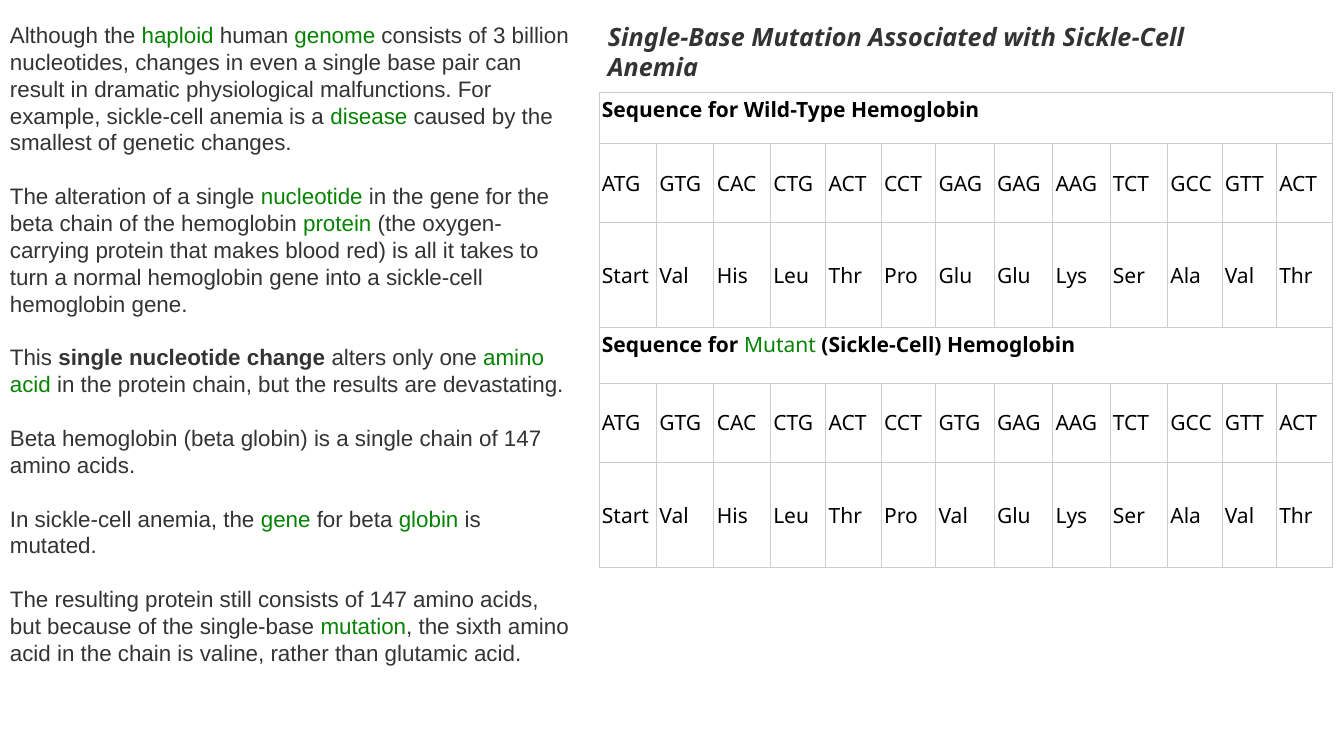
from dataclasses import dataclass

from lxml import etree
from pptx import Presentation
from pptx.dml.color import RGBColor
from pptx.enum.text import MSO_ANCHOR
from pptx.oxml.ns import qn
from pptx.util import Pt

MIDDLE, TOP = MSO_ANCHOR.MIDDLE, MSO_ANCHOR.TOP
EMU_PER_PX = 9144


@dataclass(frozen=True)
class Theme:
    body_font: str = "Arial"
    sequence_font: str = "Noto Sans"
    ink: str = "333333"
    sequence_ink: str = "000000"
    term: str = "068303"
    rule: str = "CCCCCC"
    paper: str = "FFFFFF"
    body_size: int = 16
    title_size: int = 18
    sequence_size: int = 15
    rule_width: float = 0.5


THEME = Theme()

# |word| marks a glossary term, *words* marks bold.
STORY = [
    "Although the |haploid| human |genome| consists of 3 billion nucleotides, "
    "changes in even a single base pair can result in dramatic physiological "
    "malfunctions. For example, sickle-cell anemia is a |disease| caused by "
    "the smallest of genetic changes.",
    "The alteration of a single |nucleotide| in the gene for the beta chain of "
    "the hemoglobin |protein| (the oxygen-carrying protein that makes blood "
    "red) is all it takes to turn a normal hemoglobin gene into a sickle-cell "
    "hemoglobin gene.",
    "This *single nucleotide change *alters only one |amino acid| in the "
    "protein chain, but the results are devastating.",
    "Beta hemoglobin (beta globin) is a single chain of 147 amino acids.",
    "In sickle-cell anemia, the |gene| for beta |globin| is mutated.",
    "The resulting protein still consists of 147 amino acids, but because of "
    "the single-base |mutation|, the sixth amino acid in the chain is valine, "
    "rather than glutamic acid.",
]
TITLE = "Single-Base Mutation Associated with Sickle-Cell Anemia"
SEQUENCES = [
    ("*Sequence for Wild-Type Hemoglobin*",
     "ATG GTG CAC CTG ACT CCT GAG GAG AAG TCT GCC GTT ACT",
     "Start Val His Leu Thr Pro Glu Glu Lys Ser Ala Val Thr"),
    ("*Sequence for *|Mutant|* (Sickle-Cell) Hemoglobin*",
     "ATG GTG CAC CTG ACT CCT GTG GAG AAG TCT GCC GTT ACT",
     "Start Val His Leu Thr Pro Val Glu Lys Ser Ala Val Thr"),
]
CODON_WIDTHS = [57, 57, 56, 55, 55, 54, 58, 58, 57, 57, 54, 54, 56]
ROW_HEIGHTS = [50, 79, 104, 55, 79, 104]


def px(length):
    return length * EMU_PER_PX


def add_marked_text(paragraph, text, font_name, size, color):
    """Turn |term| and *bold* marks into formatted runs."""
    for bold_index, chunk in enumerate(text.split("*")):
        for term_index, words in enumerate(chunk.split("|")):
            if not words:
                continue
            run = paragraph.add_run()
            run.text = words
            run.font.name = font_name
            run.font.size = Pt(size)
            run.font.bold = bold_index % 2 == 1
            run.font.color.rgb = RGBColor.from_string(
                THEME.term if term_index % 2 else color)


def add_text_frame(slide, box):
    frame = slide.shapes.add_textbox(*map(px, box)).text_frame
    frame.word_wrap = True
    return frame


def add_story(slide, box):
    frame = add_text_frame(slide, box)
    for index, text in enumerate(STORY):
        paragraph = frame.add_paragraph() if index else frame.paragraphs[0]
        if index:
            paragraph.space_before = Pt(THEME.body_size * 1.2)
        add_marked_text(paragraph, text, THEME.body_font, THEME.body_size,
                        THEME.ink)


def add_title(slide, box):
    paragraph = add_text_frame(slide, box).paragraphs[0]
    add_marked_text(paragraph, f"*{TITLE}*", THEME.sequence_font,
                    THEME.title_size, THEME.ink)
    paragraph.runs[0].font.italic = True


def style_cell(cell, anchor):
    cell.vertical_anchor = anchor
    cell.margin_left, cell.margin_right = px(3), px(6)
    cell.margin_top = cell.margin_bottom = px(2)
    properties = cell._tc.get_or_add_tcPr()
    for side in ("a:lnL", "a:lnR", "a:lnT", "a:lnB"):
        line = etree.SubElement(properties, qn(side),
                                w=str(Pt(THEME.rule_width)))
        fill = etree.SubElement(line, qn("a:solidFill"))
        etree.SubElement(fill, qn("a:srgbClr"), val=THEME.rule)
    cell.fill.solid()
    cell.fill.fore_color.rgb = RGBColor.from_string(THEME.paper)


def add_sequence_table(slide, box):
    table = slide.shapes.add_table(
        len(ROW_HEIGHTS), len(CODON_WIDTHS), *map(px, box)).table
    table.first_row = table.horz_banding = False
    for column, width in zip(table.columns, CODON_WIDTHS):
        column.width = px(width)
    for row, height in zip(table.rows, ROW_HEIGHTS):
        row.height = px(height)

    rows = []
    for heading, codons, residues in SEQUENCES:
        rows += [[heading], codons.split(), residues.split()]
    for row_index, texts in enumerate(rows):
        is_heading = len(texts) == 1
        for column_index in range(len(CODON_WIDTHS)):
            style_cell(table.cell(row_index, column_index),
                       TOP if is_heading else MIDDLE)
        if is_heading:
            table.cell(row_index, 0).merge(
                table.cell(row_index, len(CODON_WIDTHS) - 1))
        for column_index, text in enumerate(texts):
            cell = table.cell(row_index, column_index)
            add_marked_text(cell.text_frame.paragraphs[0], text,
                            THEME.sequence_font, THEME.sequence_size,
                            THEME.sequence_ink)


def main():
    deck = Presentation()
    deck.slide_width, deck.slide_height = px(1333), px(750)
    slide = deck.slides.add_slide(deck.slide_layouts[6])
    add_sequence_table(slide, (594, 92, sum(CODON_WIDTHS), sum(ROW_HEIGHTS)))
    add_title(slide, (593, 16, 667, 71))
    add_story(slide, (0, 16, 579, 656))
    deck.save("out.pptx")


if __name__ == "__main__":
    main()
